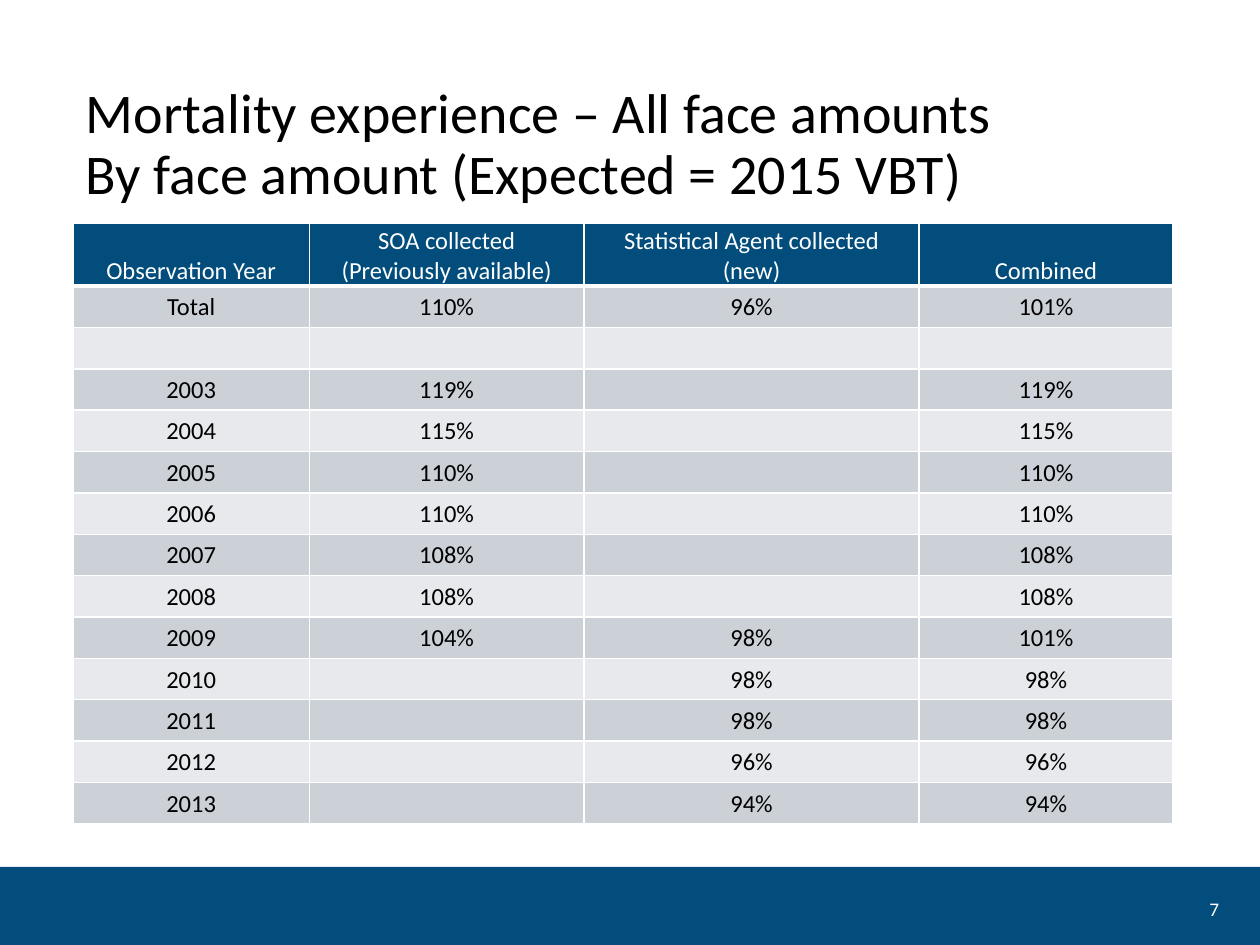
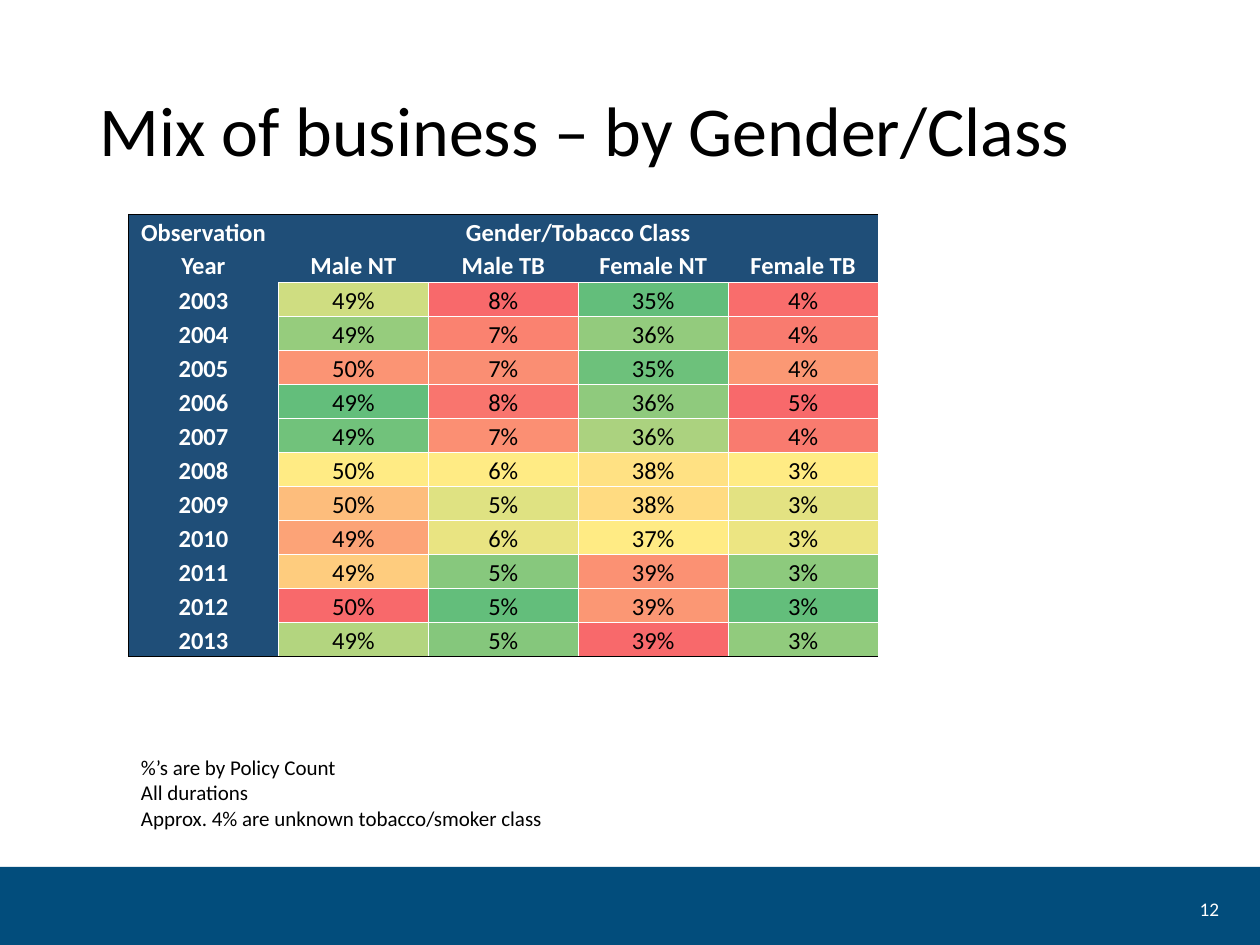
import pptx
import pptx.dml.color
import pptx.enum.shapes
import pptx.enum.text
import pptx.oxml
import pptx.oxml.ns
import pptx.util

Pt = pptx.util.Pt
RGBColor = pptx.dml.color.RGBColor
Align = pptx.enum.text.PP_ALIGN
Anchor = pptx.enum.text.MSO_ANCHOR
AutoSize = pptx.enum.text.MSO_AUTO_SIZE

FONT = "Calibri"
BAND_BLUE = RGBColor(0x02, 0x4D, 0x7C)
HEADER_BLUE = RGBColor(0x1F, 0x4E, 0x78)
GREY_DARK = RGBColor(0xCC, 0xD0, 0xD7)
GREY_LIGHT = RGBColor(0xE7, 0xE9, 0xEC)
WHITE = RGBColor(0xFF, 0xFF, 0xFF)
BLACK = RGBColor(0, 0, 0)

BAND_BOX = (0, 495.36, 720, 46.8)
NUMBER_BOX = (665.64, 511.56, 38.16, 15.84)

EXPERIENCE_HEADER = ["Observation Year", "SOA collected\n(Previously available)",
                     "Statistical Agent collected\n(new)", "Combined"]
EXPERIENCE_ROWS = [
    ["Total", "110%", "96%", "101%"],
    ["", "", "", ""],
    ["2003", "119%", "", "119%"],
    ["2004", "115%", "", "115%"],
    ["2005", "110%", "", "110%"],
    ["2006", "110%", "", "110%"],
    ["2007", "108%", "", "108%"],
    ["2008", "108%", "", "108%"],
    ["2009", "104%", "98%", "101%"],
    ["2010", "", "98%", "98%"],
    ["2011", "", "98%", "98%"],
    ["2012", "", "96%", "96%"],
    ["2013", "", "94%", "94%"],
]

MIX_HEADERS = [["Observation", "Gender/Tobacco Class", "", "", ""],
               ["Year", "Male NT", "Male TB", "Female NT", "Female TB"]]
MIX_ROWS = [
    ("2003", "49% 8% 35% 4%", "CFDD81 F8696B 63BE7B F96D6C"),
    ("2004", "49% 7% 36% 4%", "96CC7D FA8270 93CB7D F97B6F"),
    ("2005", "50% 7% 35% 4%", "FB9474 FA8E73 6DC17B FB9874"),
    ("2006", "49% 8% 36% 5%", "63BE7B F9756E 8FCA7D F8696B"),
    ("2007", "49% 7% 36% 4%", "71C27B FB8F73 ABD27F F97B6F"),
    ("2008", "50% 6% 38% 3%", "FFEB84 FFEB84 FFE183 FFEB84"),
    ("2009", "50% 5% 38% 3%", "FDBD7C DFE282 FFDB81 E3E282"),
    ("2010", "49% 6% 37% 3%", "FCA377 E9E482 FFEB84 ECE582"),
    ("2011", "49% 5% 39% 3%", "FECC7E 87C87D FB9173 8DCA7D"),
    ("2012", "50% 5% 39% 3%", "F8696B 63BE7B FB9774 63BE7B"),
    ("2013", "49% 5% 39% 3%", "B3D57F 85C77C F8696B 91CB7D"),
]
NOTES = ["%’s are by Policy Count", "All durations",
         "Approx. 4% are unknown tobacco/smoker class"]


def points(box):
    """Convert a box of point values to lengths."""
    return [Pt(value) for value in box]


def write_text(frame, *lines, size=14, color=BLACK, bold=False, align=Align.LEFT,
               spacing=None):
    """Write one paragraph for each line, all in one format."""
    for index, line in enumerate(lines):
        para = frame.add_paragraph() if index else frame.paragraphs[0]
        para.text = line
        para.alignment = align
        if spacing:
            para.line_spacing = spacing
        for span in para.runs:
            span.font.name = FONT
            span.font.size = Pt(size)
            span.font.bold = bold
            span.font.color.rgb = color
        if not line:
            para._p.get_or_add_endParaRPr().set("sz", str(size * 100))


def add_text_box(page, box, *lines, anchor=Anchor.TOP, auto_size=AutoSize.NONE, **style):
    """Add a wrapping text box."""
    frame = page.shapes.add_textbox(*points(box)).text_frame
    frame.word_wrap = True
    frame.auto_size = auto_size
    frame.vertical_anchor = anchor
    write_text(frame, *lines, **style)


def add_page(deck, title, title_box, number, size, anchor):
    """Add a page with its title, bottom band and page number."""
    page = deck.slides.add_slide(deck.slide_layouts[5])
    heading = page.shapes.title
    heading.left, heading.top, heading.width, heading.height = points(title_box)
    heading.text_frame.auto_size = AutoSize.NONE
    heading.text_frame.vertical_anchor = anchor
    write_text(heading.text_frame, title, size=size, spacing=0.9)
    band = page.shapes.add_shape(pptx.enum.shapes.MSO_SHAPE.RECTANGLE, *points(BAND_BOX))
    band.shadow.inherit = False
    band.fill.solid()
    band.fill.fore_color.rgb = BAND_BLUE
    band.line.fill.background()
    add_text_box(page, NUMBER_BOX, number, anchor=Anchor.MIDDLE, size=11,
                 color=WHITE, align=Align.RIGHT)
    return page


def add_grid(page, box, widths, heights):
    """Add a table with the given column widths and row heights."""
    table = page.shapes.add_table(len(heights), len(widths), *points(box)).table
    for column, width in zip(table.columns, widths):
        column.width = Pt(width)
    for row, height in zip(table.rows, heights):
        row.height = Pt(height)
    return table


def draw_borders(cell, borders):
    """Draw the sides named in borders as (colour, width) and hide the others."""
    for index, side in enumerate("LRTB"):
        color, width = borders.get(side, (None, 0))
        paint = (f'<a:solidFill><a:srgbClr val="{color}"/></a:solidFill>'
                 if color is not None else "<a:noFill/>")
        line = pptx.oxml.parse_xml(
            f'<a:ln{side} {pptx.oxml.ns.nsdecls("a")} w="{Pt(width)}">{paint}</a:ln{side}>')
        cell._tc.get_or_add_tcPr().insert(index, line)


def fill_cell(cell, text, fill, borders, anchor, **style):
    """Give a cell its centred text, fill and borders."""
    cell.margin_left = cell.margin_top = cell.margin_right = Pt(0.72)
    cell.margin_bottom = 0
    cell.vertical_anchor = anchor
    write_text(cell.text_frame, text, align=Align.CENTER, **style)
    cell.fill.solid()
    cell.fill.fore_color.rgb = fill
    draw_borders(cell, borders)


def add_experience_table(page, box):
    """Add the mortality experience table with grey banded rows."""
    left, top, width, height = box
    header_height = 36
    row_height = (height - header_height) / len(EXPERIENCE_ROWS)
    table = add_grid(page, box, [135, 157, 191.5, width - 483.5],
                     [header_height] + [row_height] * len(EXPERIENCE_ROWS))
    thin = dict.fromkeys("LRTB", (WHITE, 1))
    for column, text in enumerate(EXPERIENCE_HEADER):
        fill_cell(table.cell(0, column), text, BAND_BLUE, {**thin, "B": (WHITE, 3)},
                  Anchor.BOTTOM, color=WHITE)
    for row, values in enumerate(EXPERIENCE_ROWS, 1):
        borders = {**thin, "T": (WHITE, 3)} if row == 1 else thin
        for column, text in enumerate(values):
            fill_cell(table.cell(row, column), text, GREY_DARK if row % 2 else GREY_LIGHT,
                      borders, Anchor.MIDDLE)


def add_mix_table(page, box):
    """Add the business mix table with its heat colours."""
    left, top, width, height = box
    columns, rows = 5, len(MIX_HEADERS) + len(MIX_ROWS)
    table = add_grid(page, box, [width / columns] * columns, [height / rows] * rows)
    black, white = (BLACK, 0.5), (WHITE, 0.5)
    for row, labels in enumerate(MIX_HEADERS):
        for column, text in enumerate(labels):
            borders = {"L": black} if column == 0 else {}
            if row == 0:
                borders["T"] = black
            elif column:
                borders["B"] = white
            fill_cell(table.cell(row, column), text, HEADER_BLUE, borders,
                      Anchor.MIDDLE if row else Anchor.BOTTOM, color=WHITE, bold=True)
    table.cell(0, 1).merge(table.cell(0, columns - 1))
    for row, (year, shares, heat) in enumerate(MIX_ROWS, len(MIX_HEADERS)):
        bottom = {"B": black} if row == rows - 1 else {}
        fill_cell(table.cell(row, 0), year, HEADER_BLUE, {"L": black, "R": white, **bottom},
                  Anchor.BOTTOM, color=WHITE, bold=True)
        for column, (share, shade) in enumerate(zip(shares.split(), heat.split()), 1):
            fill_cell(table.cell(row, column), share, RGBColor.from_string(shade),
                      {**dict.fromkeys("LRTB", white), **bottom}, Anchor.BOTTOM)


def main():
    """Build and save the deck."""
    deck = pptx.Presentation()
    deck.slide_width, deck.slide_height = Pt(720), Pt(540)
    page = add_page(deck, "Mortality experience – All face amounts\n"
                    "By face amount (Expected = 2015 VBT)",
                    (41.76, 25.92, 628.56, 95.76), "7", 32, Anchor.BOTTOM)
    add_experience_table(page, (41.76, 127.44, 628.56, 343.44))
    page = add_page(deck, "Mix of business – by Gender/Class",
                    (49.68, 25.92, 620.64, 100.8), "12", 40, Anchor.MIDDLE)
    add_mix_table(page, (73.44, 122.4, 428.4, 252.72))
    add_text_box(page, (73.44, 427.68, 567.36, 51.12), *NOTES, size=12,
                 auto_size=AutoSize.SHAPE_TO_FIT_TEXT)
    deck.save("out.pptx")


if __name__ == "__main__":
    main()
